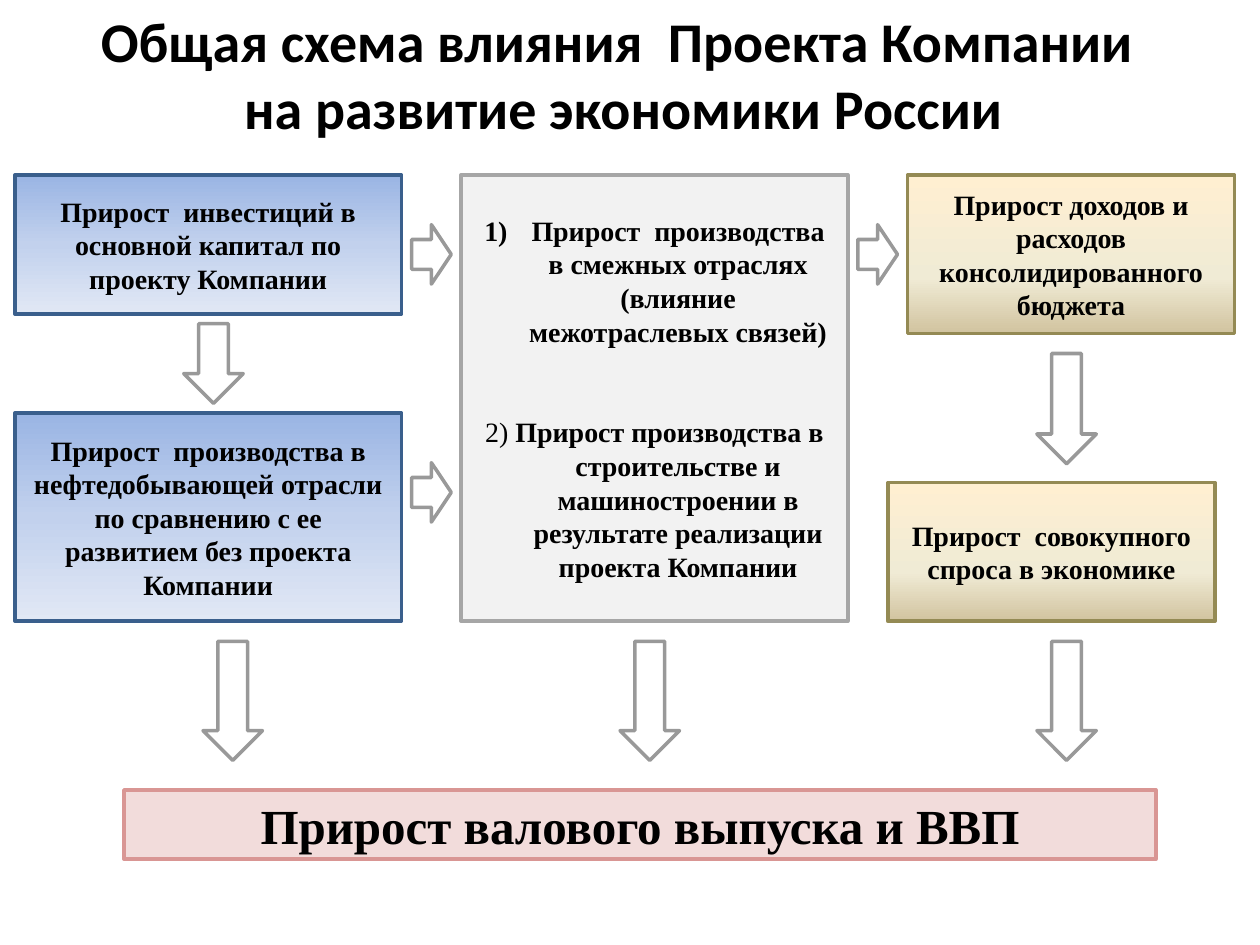
import copy
from lxml import etree
from pptx import Presentation
from pptx.dml import color
from pptx.enum import shapes, text
from pptx.oxml import ns
from pptx.util import Pt

SERIF = "Times New Roman"
BLUE = [(0, "9AB5E4"), (0.5, "C2D1ED"), (1, "E1E8F5")]
SAND = [(0, "FFEFD1"), (0.65, "F0EBD5"), (1, "D1C39F")]


def rgb(code):
    return color.RGBColor.from_string(code)


def style(para, size, face=SERIF):
    para.alignment = text.PP_ALIGN.CENTER
    para.font.size = Pt(size)
    para.font.name = face
    para.font.bold = True
    para.font.color.rgb = rgb("000000")


deck = Presentation()
deck.slide_width, deck.slide_height = Pt(720), Pt(540)
slide = deck.slides.add_slide(deck.slide_layouts[6])

# Title
title = slide.shapes.add_textbox(Pt(0), Pt(0), Pt(705.6), Pt(85))
frame = title.text_frame
frame.word_wrap = True
frame.text = "Общая схема влияния  Проекта Компании\n на развитие экономики России"
for para in frame.paragraphs:
    style(para, 32, "Calibri")

# Boxes: left, top, width, height, fill, line, text size, paragraphs
boxes = [
    (8.5, 100, 221, 79.4, BLUE, "3A5F8C", 16,
     ["Прирост  инвестиций в основной капитал по проекту Компании"]),
    (8.5, 236, 221, 119, BLUE, "3A5F8C", 16,
     ["Прирост  производства в нефтедобывающей отрасли по сравнению "
      "с ее развитием без проекта Компании"]),
    (263.5, 100, 221, 255, "F2F2F2", "A6A6A6", 16,
     ["Прирост  производства в смежных отраслях (влияние межотраслевых связей)",
      "2) "]),
    (518.5, 100, 187, 90.7, SAND, "948A54", 16,
     ["Прирост доходов и расходов консолидированного бюджета"]),
    (507.3, 275.8, 187, 79.2, SAND, "948A54", 16,
     ["Прирост  совокупного спроса в экономике"]),
    (70.8, 451.4, 589.7, 39.6, "F2DCDB", "D99694", 28,
     ["Прирост валового выпуска и ВВП"]),
]
made = []
for left, top, wide, high, fill, line, size, words in boxes:
    box = slide.shapes.add_shape(shapes.MSO_SHAPE.RECTANGLE,
                                 Pt(left), Pt(top), Pt(wide), Pt(high))
    box.shadow.inherit = False
    if isinstance(fill, str):
        box.fill.solid()
        box.fill.fore_color.rgb = rgb(fill)
    else:
        box.fill.gradient()
        box.fill.gradient_angle = 270
        stops = box._element.spPr.find(".//" + ns.qn("a:gsLst"))
        stops.append(copy.deepcopy(stops[0]))
        for stop, (place, tint) in zip(box.fill.gradient_stops, fill):
            stop.position = place
            stop.color.rgb = rgb(tint)
    box.line.color.rgb = rgb(line)
    box.line.width = Pt(2)
    frame = box.text_frame
    frame.word_wrap = True
    frame.vertical_anchor = text.MSO_ANCHOR.MIDDLE
    frame.text = "\n".join(words)
    for para in frame.paragraphs:
        style(para, size)
    made.append(box)

# Numbered points in the middle box
first, second = made[2].text_frame.paragraphs
for para in (first, second):
    props = para._p.get_or_add_pPr()
    props.set("marL", str(Pt(27)))
    props.set("indent", str(Pt(-27)))
mark = etree.Element(ns.qn("a:buAutoNum"), type="arabicParenR")
first._p.get_or_add_pPr().insert(0, mark)
second.space_before = Pt(38.4)
second.runs[0].font.bold = False
run = second.add_run()
run.text = ("Прирост производства в строительстве и машиностроении "
            "в результате реализации проекта Компании")
run.font.bold = True

# Block arrows: left, top, height, turn
arrows = [(105, 185, 45.5, 0), (592.5, 202, 63, 0)]
arrows += [(left, 366.5, 68, 0) for left in (116, 354.3, 592.5)]
arrows += [(left, top, 22.7, 270)
           for left, top in ((229.5, 134), (229.5, 270), (484.5, 134))]
for left, top, high, turn in arrows:
    arrow = slide.shapes.add_shape(shapes.MSO_SHAPE.DOWN_ARROW,
                                   Pt(left), Pt(top), Pt(34), Pt(high))
    arrow.rotation = turn
    arrow.shadow.inherit = False
    arrow.fill.background()
    arrow.line.color.rgb = rgb("000000")
    arrow.line.width = Pt(2)
    ink = arrow.line._ln.find(".//" + ns.qn("a:srgbClr"))
    etree.SubElement(ink, ns.qn("a:alpha"), val="40000")

deck.save("out.pptx")
